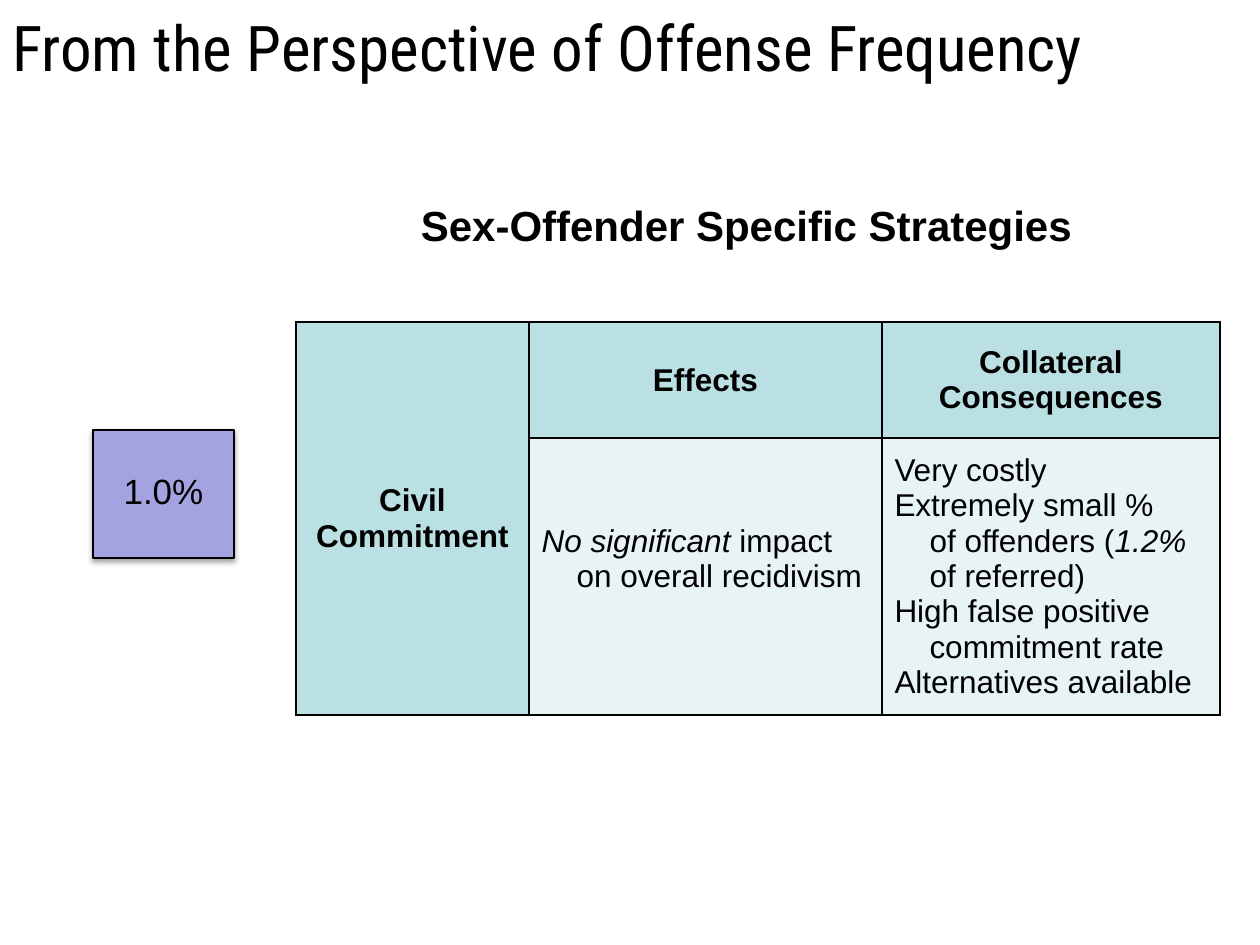
from dataclasses import dataclass
from typing import NamedTuple

from lxml.etree import SubElement
from pptx import Presentation
from pptx.dml.color import RGBColor
from pptx.enum.shapes import MSO_SHAPE
from pptx.enum.text import MSO_ANCHOR, PP_ALIGN
from pptx.oxml import parse_xml
from pptx.oxml.ns import nsdecls, qn
from pptx.util import Pt

PX = 914400 // 126  # EMU in one px


@dataclass(frozen=True)
class Theme:
    ink: str = "000000"
    head: str = "BBE0E3"
    body: str = "E7F3F4"
    badge: str = "A3A3E0"
    font: str = "Arial"
    display: str = "Roboto Condensed"
    title: int = 36
    topic: int = 24
    rate: int = 20
    cell: int = 18
    line: int = 1


class Box(NamedTuple):
    left: int
    top: int
    width: int
    height: int


class Line(NamedTuple):
    """One paragraph; every second part, split at '*', is italic."""
    text: str
    indent: int = 0


class Cell(NamedTuple):
    row: int
    col: int
    lines: list[Line]
    head: bool = True
    foot: int = 6


THEME = Theme()
STEP = 35  # indent of a carried-over line, px
COLS = [233, 353, 338]
ROWS = [116, 259]
CELLS = [
    Cell(0, 0, [Line("Civil"), Line("Commitment")]),
    Cell(0, 1, [Line("Effects")]),
    Cell(0, 2, [Line("Collateral"), Line("Consequences")]),
    Cell(1, 1, [Line("*No significant* impact"),
                Line("on overall recidivism", STEP)], False, 41),
    Cell(1, 2, [Line("Very costly"),
                Line("Extremely small %"),
                Line("of offenders (*1.2%*", STEP),
                Line("of referred)", STEP),
                Line("High false positive", 0),
                Line("commitment rate", STEP),
                Line("Alternatives available")], False),
]


def emu(box: Box) -> list[int]:
    return [side * PX for side in box]


def write(frame, lines: list[Line], *, size: int, font: str = THEME.font,
          bold: bool = False, align=PP_ALIGN.CENTER) -> None:
    for i, line in enumerate(lines):
        para = frame.paragraphs[0] if i == 0 else frame.add_paragraph()
        para.alignment = align
        if line.indent:
            para._p.get_or_add_pPr().set("marL", str(line.indent * PX))
        for j, part in enumerate(line.text.split("*")):
            if not part:
                continue
            run = para.add_run()
            run.text = part
            run.font.name = font
            run.font.size = Pt(size)
            run.font.bold = bold
            run.font.italic = j % 2 == 1
            run.font.color.rgb = RGBColor.from_string(THEME.ink)


def label(slide, box: Box, text: str, *, wrap: bool = False,
          anchor=MSO_ANCHOR.TOP, **form) -> None:
    frame = slide.shapes.add_textbox(*emu(box)).text_frame
    frame.word_wrap = wrap
    frame.vertical_anchor = anchor
    write(frame, [Line(text)], **form)


def badge(slide, box: Box) -> None:
    """Draw a square with a soft shadow below it."""
    shape = slide.shapes.add_shape(MSO_SHAPE.RECTANGLE, *emu(box))
    shape.shadow.inherit = False
    shape.fill.solid()
    shape.fill.fore_color.rgb = RGBColor.from_string(THEME.badge)
    shape.line.color.rgb = RGBColor.from_string(THEME.ink)
    shape.line.width = Pt(THEME.line)
    shape._element.spPr.find(qn("a:effectLst")).append(parse_xml(
        f'<a:outerShdw {nsdecls("a")} blurRad="{Pt(3.1)}" dist="{Pt(1.8)}" '
        f'dir="5400000" rotWithShape="0"><a:srgbClr val="{THEME.ink}">'
        '<a:alpha val="35000"/></a:srgbClr></a:outerShdw>'))


def edge(cell) -> None:
    """Rule all four sides of a cell; the sides must precede its fill."""
    props = cell._tc.get_or_add_tcPr()
    for side in ("lnL", "lnR", "lnT", "lnB"):
        rule = SubElement(props, qn(f"a:{side}"), w=str(Pt(THEME.line)))
        fill = SubElement(rule, qn("a:solidFill"))
        SubElement(fill, qn("a:srgbClr"), val=THEME.ink)


def grid(slide, left: int, top: int) -> None:
    box = Box(left, top, sum(COLS), sum(ROWS))
    table = slide.shapes.add_table(len(ROWS), len(COLS), *emu(box)).table
    for col, width in zip(table.columns, COLS):
        col.width = width * PX
    for row, height in zip(table.rows, ROWS):
        row.height = height * PX
    table.cell(0, 0).merge(table.cell(1, 0))
    for cell in table.iter_cells():
        edge(cell)
        cell.fill.solid()
        cell.fill.fore_color.rgb = RGBColor.from_string(THEME.head)
    for item in CELLS:
        cell = table.cell(item.row, item.col)
        cell.vertical_anchor = MSO_ANCHOR.MIDDLE
        cell.margin_bottom = item.foot * PX
        if not item.head:
            cell.fill.fore_color.rgb = RGBColor.from_string(THEME.body)
        write(cell.text_frame, item.lines, size=THEME.cell, bold=item.head,
              align=PP_ALIGN.CENTER if item.head else PP_ALIGN.LEFT)


def main() -> None:
    deck = Presentation()
    deck.slide_width, deck.slide_height = 1260 * PX, 945 * PX
    slide = deck.slides.add_slide(deck.slide_layouts[6])
    label(slide, Box(0, 10, 1260, 73),
          "From the Perspective of Offense Frequency", wrap=True,
          anchor=MSO_ANCHOR.MIDDLE, size=THEME.title, font=THEME.display,
          align=PP_ALIGN.LEFT)
    grid(slide, 296, 322)
    label(slide, Box(405, 193, 683, 63), "Sex-Offender Specific Strategies",
          size=THEME.topic, bold=True)
    badge(slide, Box(93, 430, 141, 128))
    label(slide, Box(111, 463, 105, 55), "1.0%", size=THEME.rate)
    deck.save("out.pptx")


if __name__ == "__main__":
    main()
